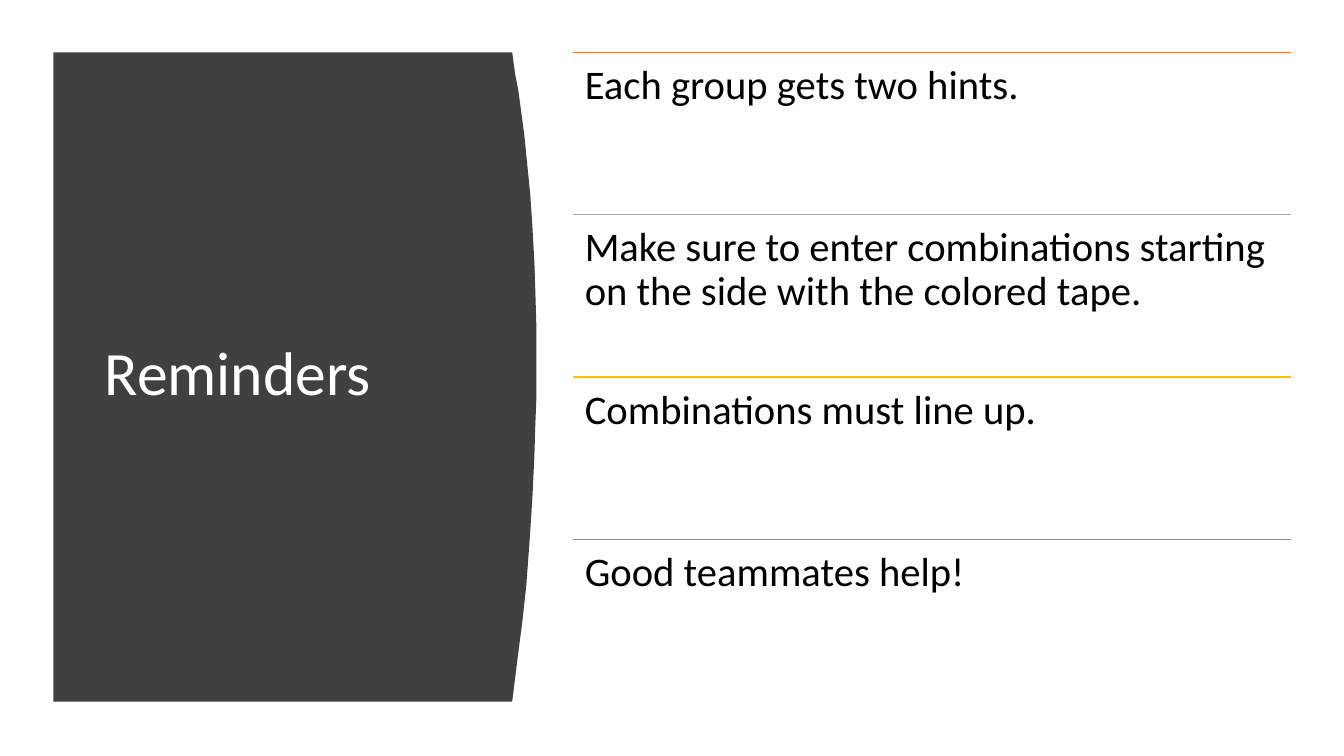
from lxml.etree import SubElement
from pptx import Presentation
from pptx.dml.color import RGBColor
from pptx.enum.shapes import MSO_CONNECTOR as Connector
from pptx.enum.text import MSO_ANCHOR as Anchor
from pptx.oxml.ns import qn
from pptx.util import Pt

PX = 9144  # EMU per px, 100 px to the inch
PAGE_SIZE = (1333, 750)
FONT = "Calibri"

CHARCOAL = RGBColor(0x40, 0x40, 0x40)
WHITE = RGBColor(0xFF, 0xFF, 0xFF)
BLACK = RGBColor(0x00, 0x00, 0x00)
ORANGE = RGBColor(0xED, 0x7D, 0x31)
GRAY = RGBColor(0xA5, 0xA5, 0xA5)
GOLD = RGBColor(0xFF, 0xC0, 0x00)
BLUE = RGBColor(0x5B, 0x9B, 0xD5)

TITLE = "Reminders"
REMINDERS = [
    ("Each group gets two hints.", ORANGE),
    ("Make sure to enter combinations starting on the side with the colored tape.", GRAY),
    ("Combinations must line up.", GOLD),
    ("Good teammates help!", BLUE),
]

TOP, BOTTOM = 52, 696
PANEL_LEFT = 53
PANEL_CURVE = [
    (508, TOP), (511, 74), (514, 89), (516, 104), (518, 119), (520, 134),
    (523, 164), (526, 194), (528, 224), (530, 260), (531, 290), (532, 325),
    (532, 394), (531, 420), (530, 452), (528, 495), (525, 540), (522, 581),
    (518, 617), (514, 648), (511, 672), (508, BOTTOM),
]
TITLE_BOX = (94, 111, 374, 524)
LIST_LEFT, LIST_WIDTH = 568, 712
ROW_HEIGHT = (BOTTOM - TOP) / len(REMINDERS)


def emu(*lengths):
    return [round(length * PX) for length in lengths]


def add_text(page, text, area, *, size, color, inset, anchor=Anchor.TOP):
    frame = page.shapes.add_textbox(*emu(*area)).text_frame
    frame.word_wrap = True
    frame.vertical_anchor = anchor
    frame.margin_left, frame.margin_top, frame.margin_right, frame.margin_bottom = emu(*inset)
    para = frame.paragraphs[0]
    para.line_spacing = 0.9
    span = para.add_run()
    span.text = text
    span.font.name = FONT
    span.font.size = Pt(size)
    span.font.color.rgb = color


def add_panel(page):
    builder = page.shapes.build_freeform(PANEL_LEFT, TOP, scale=PX)
    builder.add_line_segments(PANEL_CURVE + [(PANEL_LEFT, BOTTOM)], close=True)
    panel = builder.convert_to_shape()
    panel.shadow.inherit = False
    panel.fill.solid()
    panel.fill.fore_color.rgb = CHARCOAL
    panel.line.fill.background()


def add_divider(page, y, color):
    ends = emu(LIST_LEFT, y, LIST_LEFT + LIST_WIDTH, y)
    divider = page.shapes.add_connector(Connector.STRAIGHT, *ends)
    divider.line.color.rgb = color
    divider.line.width = Pt(1)
    SubElement(divider._element.spPr, qn("a:effectLst"))


def main():
    deck = Presentation()
    deck.slide_width, deck.slide_height = emu(*PAGE_SIZE)
    page = deck.slides.add_slide(deck.slide_layouts[6])

    add_panel(page)
    add_text(page, TITLE, TITLE_BOX, size=44, color=WHITE,
             inset=(10, 5, 10, 5), anchor=Anchor.MIDDLE)

    for row, (reminder, color) in enumerate(REMINDERS):
        y = TOP + row * ROW_HEIGHT
        add_divider(page, y, color)
        add_text(page, reminder, (LIST_LEFT, y, LIST_WIDTH, ROW_HEIGHT),
                 size=29, color=BLACK, inset=(12, 12, 12, 12))

    deck.save("out.pptx")


if __name__ == "__main__":
    main()
